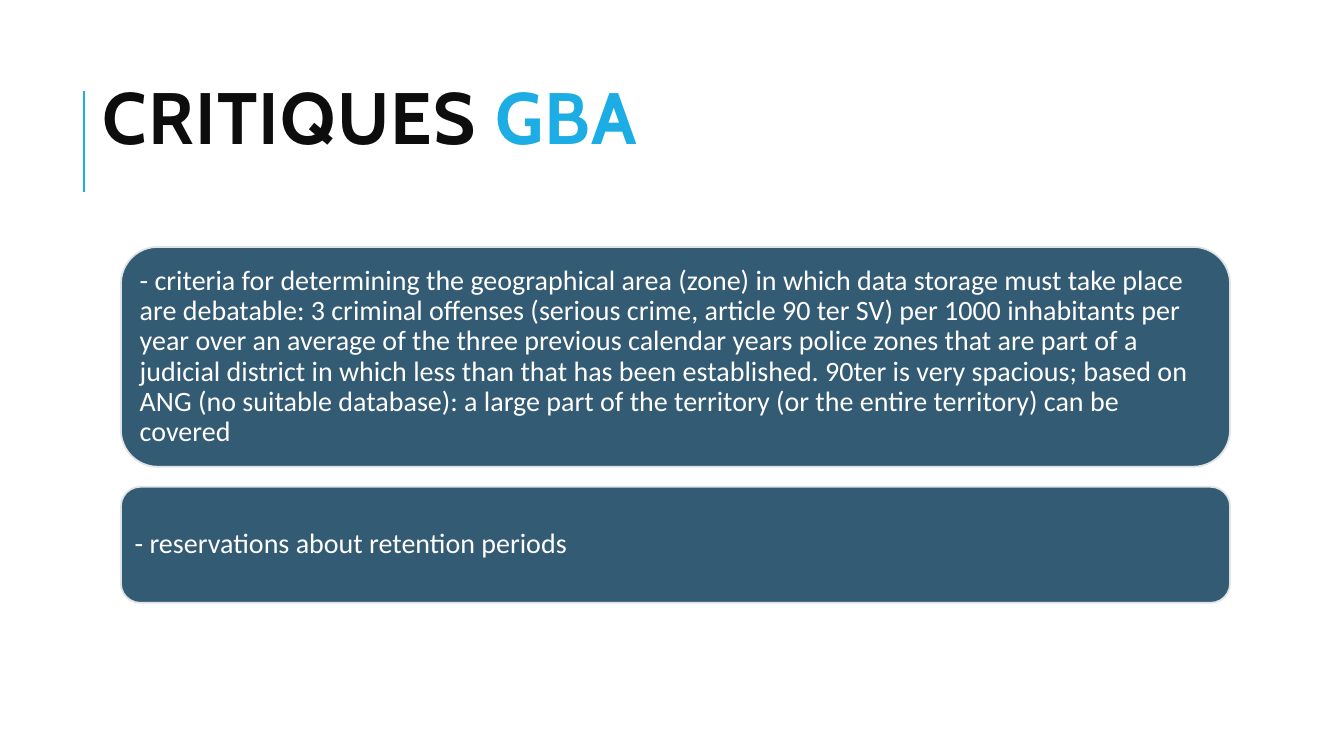
"""Build the slide on critiques of the GBA."""
from pptx import Presentation
from pptx.dml.color import RGBColor
from pptx.enum.shapes import MSO_CONNECTOR as Connector, MSO_SHAPE as Shape
from pptx.enum.text import MSO_ANCHOR as Anchor, MSO_AUTO_SIZE as AutoSize, PP_ALIGN as Align
from pptx.oxml.ns import qn
from pptx.util import Inches, Pt

TITLE = [("CRITIQUES ", "0D0D0D"), ("GBA", "1CADE4")]
TITLE_BOX = (0.92, 0.61, 11.5, 1.24)
ACCENT_LINE = (0.83, 1.9, 0.83, 0.9)
CRITIQUES = [
    ("- criteria for determining the geographical area (zone) in which data storage must take place "
     "are debatable: 3 criminal offenses (serious crime, article 90 ter SV) per 1000 inhabitants per "
     "year over an average of the three previous calendar years police zones that are part of a "
     "judicial district in which less than that has been established. 90ter is very spacious; based on "
     "ANG (no suitable database): a large part of the territory (or the entire territory) can be "
     "covered", 2.18),
    ("- reservations about retention periods", 1.15),
]
CARD_LEFT, CARD_TOP, CARD_WIDTH, CARD_GAP = 1.2, 2.45, 11, 0.2
TITLE_FONT = {"name": "Cabin", "size": Pt(52), "bold": True}
CARD_FONT = {"name": "Calibri", "size": Pt(20)}
TITLE_FRAME = {"word_wrap": True, "auto_size": AutoSize.NONE, "vertical_anchor": Anchor.MIDDLE}
CARD_FRAME = TITLE_FRAME | {f"margin_{side}": Inches(0.08) for side in ("left", "top", "right", "bottom")}
TITLE_PARAGRAPH = {"alignment": Align.LEFT, "line_spacing": 0.8}
CARD_PARAGRAPH = {"alignment": Align.LEFT, "line_spacing": 0.9}


def color(value):
    return RGBColor.from_string(value)


def apply(target, values):
    for name, value in values.items():
        setattr(target, name, value)


def add_run(paragraph, text, font, value):
    run = paragraph.add_run()
    run.text = text
    apply(run.font, font)
    run.font.color.rgb = color(value)
    return run


def set_line(shape, value, width):
    shape.line.color.rgb = color(value)
    shape.line.width = Pt(width)


def add_title(slide):
    title = slide.shapes.title
    apply(title, dict(zip(("left", "top", "width", "height"), map(Inches, TITLE_BOX))))
    apply(title.text_frame, TITLE_FRAME)
    paragraph = title.text_frame.paragraphs[0]
    apply(paragraph, TITLE_PARAGRAPH)
    for text, value in TITLE:
        run = add_run(paragraph, text, TITLE_FONT, value)
        run.font._element.set("spc", "100")


def add_accent_line(slide):
    line = slide.shapes.add_connector(Connector.STRAIGHT, *map(Inches, ACCENT_LINE))
    set_line(line, "1CADE4", 1.5)
    properties = line._element.spPr
    properties.append(properties.makeelement(qn("a:effectLst"), {}))


def add_card(slide, text, top, height):
    box = map(Inches, (CARD_LEFT, top, CARD_WIDTH, height))
    card = slide.shapes.add_shape(Shape.ROUNDED_RECTANGLE, *box)
    card.shadow.inherit = False
    card.fill.solid()
    card.fill.fore_color.rgb = color("335B74")
    set_line(card, "DFE3E5", 1.25)
    apply(card.text_frame, CARD_FRAME)
    paragraph = card.text_frame.paragraphs[0]
    apply(paragraph, CARD_PARAGRAPH)
    add_run(paragraph, text, CARD_FONT, "FFFFFF")


def main():
    presentation = Presentation()
    presentation.slide_width, presentation.slide_height = Inches(13.33), Inches(7.5)
    slide = presentation.slides.add_slide(presentation.slide_layouts[5])
    add_accent_line(slide)
    add_title(slide)
    top = CARD_TOP
    for text, height in CRITIQUES:
        add_card(slide, text, top, height)
        top += height + CARD_GAP
    presentation.save("out.pptx")


if __name__ == "__main__":
    main()
